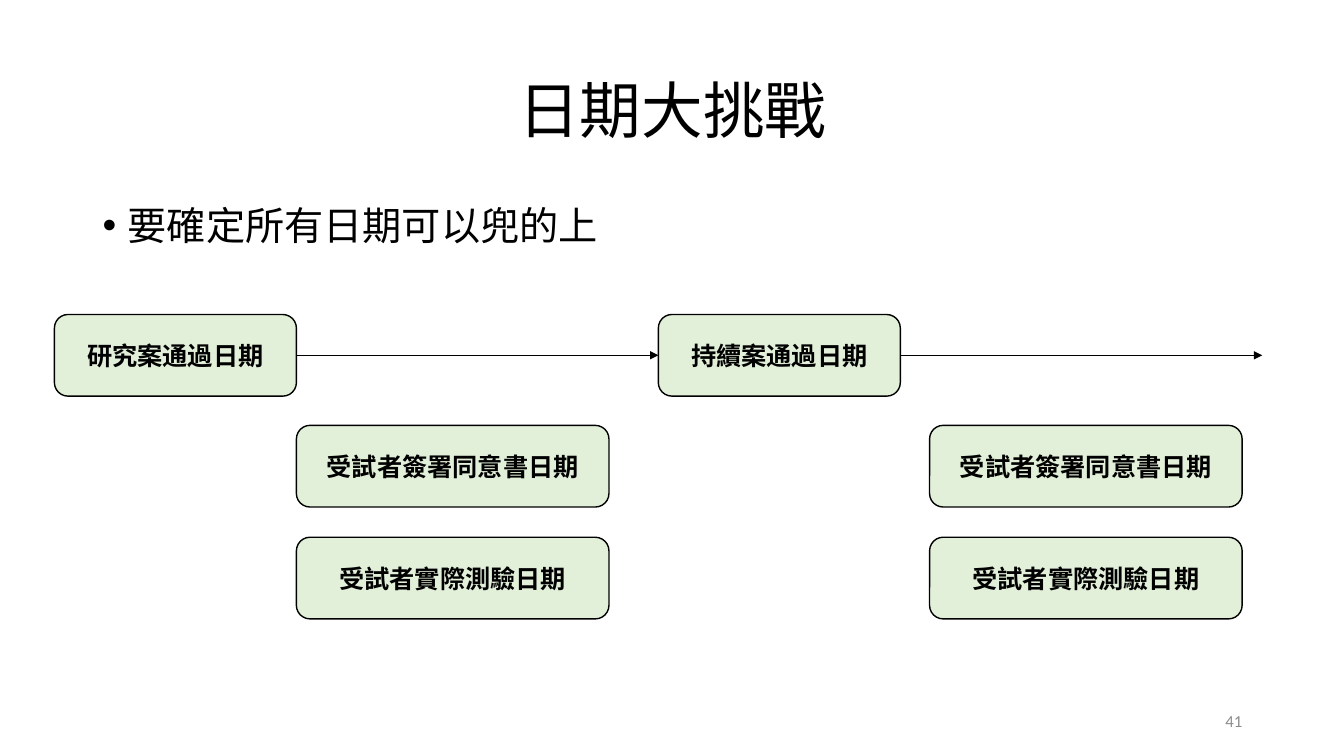
from lxml.etree import SubElement
from pptx import Presentation
from pptx.dml.color import RGBColor
from pptx.enum.shapes import MSO_CONNECTOR, MSO_SHAPE
from pptx.enum.text import MSO_ANCHOR, PP_ALIGN
from pptx.oxml.ns import qn
from pptx.util import Inches, Pt

BLACK = RGBColor(0x00, 0x00, 0x00)
GRAY = RGBColor(0x8C, 0x8C, 0x8C)
PALE_GREEN = RGBColor(0xE2, 0xF0, 0xD9)
FONT = "Calibri"

BOX_HEIGHT = 0.81
MILESTONE_WIDTH = 2.4
TASK_WIDTH = 3.1
ARROW_LENGTH = 3.59
TASK_TOPS = (1.1, 2.21)
TASKS = ("受試者簽署同意書日期", "受試者實際測驗日期")


def write_text(shape, text, size, color=BLACK, align=PP_ALIGN.LEFT,
               anchor=MSO_ANCHOR.MIDDLE, bold=False):
    """Fill a shape with one styled paragraph and return the paragraph."""
    frame = shape.text_frame
    frame.word_wrap = True
    frame.vertical_anchor = anchor
    paragraph = frame.paragraphs[0]
    paragraph.text = text
    paragraph.alignment = align
    paragraph.font.name = FONT
    paragraph.font.size = Pt(size)
    paragraph.font.bold = bold
    paragraph.font.color.rgb = color
    return paragraph


def add_text(slide, left, top, width, height, text, size, **style):
    """Add a text box and return its paragraph."""
    shape = slide.shapes.add_textbox(
        Inches(left), Inches(top), Inches(width), Inches(height))
    return write_text(shape, text, size, **style)


def add_title(slide, left, top, width, height):
    """Add the centred slide title."""
    paragraph = add_text(slide, left, top, width, height, "日期大挑戰", 44,
                         align=PP_ALIGN.CENTER)
    paragraph.line_spacing = 0.9


def add_bullet(slide, left, top, width, height):
    """Add the bulleted statement under the title."""
    paragraph = add_text(slide, left, top, width, height,
                         "要確定所有日期可以兜的上", 28, anchor=MSO_ANCHOR.TOP)
    paragraph.line_spacing = 0.9
    paragraph.space_before = Pt(10)
    properties = paragraph._p.get_or_add_pPr()
    properties.set("marL", str(Inches(0.25)))
    properties.set("indent", str(Inches(-0.25)))
    SubElement(properties, qn("a:buFont")).set("typeface", "Arial")
    SubElement(properties, qn("a:buChar")).set("char", "•")


def add_date_box(slide, left, top, width, text):
    """Add a rounded box naming one date."""
    shape = slide.shapes.add_shape(
        MSO_SHAPE.ROUNDED_RECTANGLE,
        Inches(left), Inches(top), Inches(width), Inches(BOX_HEIGHT))
    shape.shadow.inherit = False
    shape.fill.solid()
    shape.fill.fore_color.rgb = PALE_GREEN
    shape.line.color.rgb = BLACK
    shape.line.width = Pt(1)
    write_text(shape, text, 18, align=PP_ALIGN.CENTER, bold=True)


def add_arrow(slide, left, top, length):
    """Add a thin horizontal arrow pointing right."""
    connector = slide.shapes.add_connector(
        MSO_CONNECTOR.STRAIGHT, Inches(left), Inches(top),
        Inches(left + length), Inches(top))
    connector.line.color.rgb = BLACK
    connector.line.width = Pt(0.5)
    SubElement(connector.line._get_or_add_ln(), qn("a:tailEnd")).set("type", "triangle")
    SubElement(connector._element.spPr, qn("a:effectLst"))


def add_phase(slide, left, top, milestone, task_left):
    """Add a milestone, its arrow and the task dates below it."""
    add_date_box(slide, left, top, MILESTONE_WIDTH, milestone)
    for offset, task in zip(TASK_TOPS, TASKS):
        add_date_box(slide, task_left, top + offset, TASK_WIDTH, task)
    add_arrow(slide, left + MILESTONE_WIDTH, top + BOX_HEIGHT / 2, ARROW_LENGTH)


def main():
    """Build and save the slide."""
    presentation = Presentation()
    presentation.slide_width = Inches(13.33)
    presentation.slide_height = Inches(7.5)
    slide = presentation.slides.add_slide(presentation.slide_layouts[6])
    add_title(slide, 0.92, 0.4, 11.5, 1.45)
    add_bullet(slide, 0.92, 2, 11.5, 0.64)
    add_phase(slide, 0.54, 3.12, "研究案通過日期", 2.94)
    add_phase(slide, 6.53, 3.12, "持續案通過日期", 9.22)
    add_text(slide, 9.42, 6.95, 3, 0.4, "41", 12, color=GRAY, align=PP_ALIGN.RIGHT)
    presentation.save("out.pptx")


if __name__ == "__main__":
    main()
